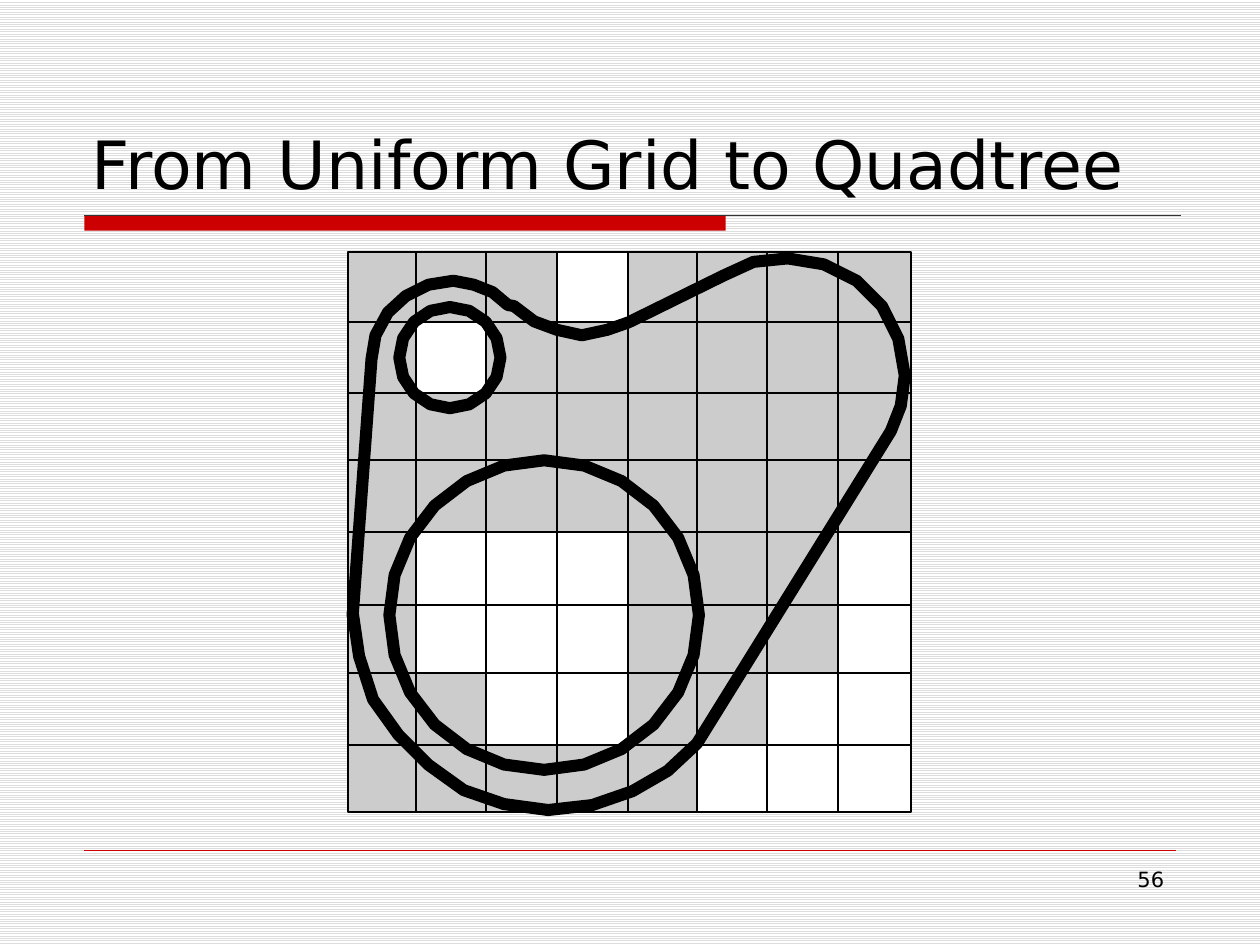
import math

import pptx
import pptx.dml.color
import pptx.enum.dml
import pptx.enum.shapes
import pptx.enum.text
import pptx.oxml.ns
import pptx.util
from lxml import etree

Cm = pptx.util.Cm
FONT = "DejaVu Sans"
COLOURS = {
    "black": "000000",
    "white": "FFFFFF",
    "stripe": "DDDDDD",
    "cell": "CCCCCC",
    "accent": "CC0000",
    "rule": "333333",
}

# Grid line positions in cm
COLUMNS = [7.01, 8.38, 9.8, 11.23, 12.65, 14.05, 15.47, 16.89, 18.36]
ROWS = [5.08, 6.5, 7.92, 9.27, 10.72, 12.19, 13.56, 15.01, 16.38]

# Empty areas as first column, first row, end column, end row
EMPTY_AREAS = [
    (1, 1, 2, 2), (3, 0, 4, 1), (1, 4, 4, 6), (2, 6, 4, 7),
    (5, 7, 8, 8), (6, 6, 8, 7), (7, 4, 8, 6),
]

PART_OUTLINE = [
    (7.11, 12.42), (7.49, 7.24), (7.57, 6.76), (7.82, 6.3), (8.18, 5.97),
    (8.64, 5.74), (9.14, 5.66), (9.55, 5.74), (9.93, 5.89), (10.24, 6.15),
    (10.36, 6.17), (10.77, 6.48), (11.23, 6.65), (11.73, 6.76),
    (12.24, 6.65), (12.67, 6.5), (14.58, 5.56), (15.19, 5.28),
    (15.88, 5.21), (16.61, 5.33), (17.27, 5.66), (17.78, 6.17),
    (18.11, 6.83), (18.24, 7.57), (18.16, 8.18), (17.96, 8.69),
    (14.05, 14.99), (13.46, 15.54), (12.75, 15.95), (11.94, 16.23),
    (11.05, 16.33), (10.16, 16.21), (9.35, 15.93), (8.64, 15.42),
    (8.03, 14.81), (7.52, 14.1), (7.24, 13.23), (7.11, 12.34),
]


def colour(name):
    return pptx.dml.color.RGBColor.from_string(COLOURS[name])


def set_line(line, name, width):
    line.color.rgb = colour(name)
    line.width = pptx.util.Pt(width)


def add_background(page):
    fill = page.background.fill
    fill.patterned()
    fill.pattern = pptx.enum.dml.MSO_PATTERN.LIGHT_HORIZONTAL
    fill.fore_color.rgb = colour("stripe")
    fill.back_color.rgb = colour("white")


def add_rectangle(page, left, top, right, bottom, fill):
    """Add a rectangle between two corners, without an outline."""
    box = page.shapes.add_shape(
        pptx.enum.shapes.MSO_SHAPE.RECTANGLE,
        Cm(left), Cm(top), Cm(right - left), Cm(bottom - top))
    box.shadow.inherit = False
    box.fill.solid()
    box.fill.fore_color.rgb = colour(fill)
    box.line.fill.background()
    return box


def add_line(page, x1, y1, x2, y2, name, width):
    line = page.shapes.add_connector(
        pptx.enum.shapes.MSO_CONNECTOR.STRAIGHT, Cm(x1), Cm(y1), Cm(x2), Cm(y2))
    set_line(line.line, name, width)
    properties = line._element.spPr
    etree.SubElement(properties, pptx.oxml.ns.qn("a:effectLst"))


def add_outline(page, points):
    """Add a thick closed outline through points in cm."""
    start, *others = [(Cm(x), Cm(y)) for x, y in points]
    builder = page.shapes.build_freeform(*start)
    builder.add_line_segments(others, close=True)
    outline = builder.convert_to_shape()
    outline.shadow.inherit = False
    outline.fill.background()
    set_line(outline.line, "black", 6.88)


def regular_polygon(x, y, radius, sides):
    angles = [2 * math.pi * i / sides for i in range(sides)]
    return [(x + radius * math.cos(a), y + radius * math.sin(a)) for a in angles]


def write_text(box, text, size, align, anchor):
    frame = box.text_frame
    frame.word_wrap = True
    frame.auto_size = pptx.enum.text.MSO_AUTO_SIZE.NONE
    frame.vertical_anchor = anchor
    frame.text = text
    para = frame.paragraphs[0]
    para.alignment = align
    para.font.name = FONT
    para.font.size = pptx.util.Pt(size)
    para.font.color.rgb = colour("black")


def add_title(page, text):
    title = page.shapes.title
    title.left, title.top, title.width, title.height = (
        Cm(1.6), Cm(0.84), Cm(22.23), Cm(3.38))
    write_text(title, text, 38, pptx.enum.text.PP_ALIGN.LEFT,
               pptx.enum.text.MSO_ANCHOR.BOTTOM)


def add_page_number(page, number):
    box = page.shapes.add_textbox(Cm(18.21), Cm(17.35), Cm(5.51), Cm(1.32))
    write_text(box, number, 12, pptx.enum.text.PP_ALIGN.RIGHT,
               pptx.enum.text.MSO_ANCHOR.TOP)


def add_grid(page):
    left, right, top, bottom = COLUMNS[0], COLUMNS[-1], ROWS[0], ROWS[-1]
    area = add_rectangle(page, left, top, right, bottom, "cell")
    for column, row, end_column, end_row in EMPTY_AREAS:
        add_rectangle(page, COLUMNS[column], ROWS[row],
                      COLUMNS[end_column], ROWS[end_row], "white")
    frame = add_rectangle(page, left, top, right, bottom, "cell")
    frame.fill.background()
    set_line(frame.line, "black", 1.13)
    for x in COLUMNS[1:-1]:
        add_line(page, x, top, x, bottom, "black", 1.13)
    for y in ROWS[1:-1]:
        add_line(page, left, y, right, y, "black", 1.13)


def main():
    deck = pptx.Presentation()
    deck.slide_width, deck.slide_height = Cm(25.4), Cm(19.05)
    page = deck.slides.add_slide(deck.slide_layouts.get_by_name("Title Only"))
    add_background(page)
    add_rectangle(page, 1.7, 4.34, 14.63, 4.65, "accent")
    add_line(page, 1.7, 4.34, 23.8, 4.34, "rule", 0.75)
    add_line(page, 1.7, 17.15, 23.7, 17.15, "accent", 0.25)
    add_title(page, "From Uniform Grid to Quadtree")
    add_grid(page)
    add_outline(page, PART_OUTLINE)
    add_outline(page, regular_polygon(10.97, 12.4, 3.12, 24))
    add_outline(page, regular_polygon(9.07, 7.21, 1.02, 16))
    add_page_number(page, "56")
    deck.save("out.pptx")


if __name__ == "__main__":
    main()
